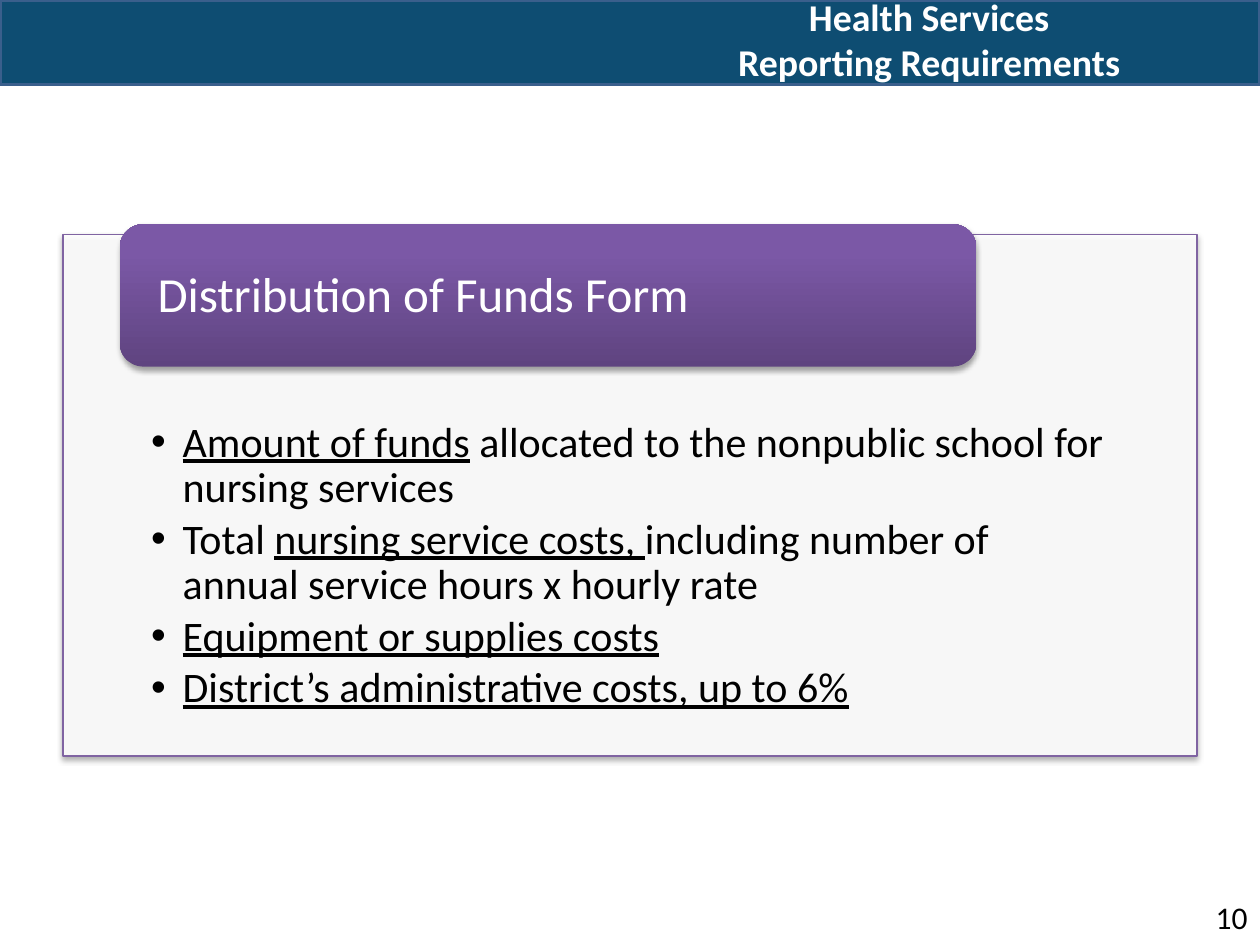
from copy import deepcopy
from dataclasses import dataclass

from lxml import etree
from pptx import Presentation
from pptx.dml.color import RGBColor
from pptx.enum.shapes import MSO_SHAPE
from pptx.enum.text import MSO_ANCHOR, MSO_AUTO_SIZE, PP_ALIGN
from pptx.oxml.ns import qn
from pptx.util import Inches, Pt

RECTANGLE, ROUNDED = MSO_SHAPE.RECTANGLE, MSO_SHAPE.ROUNDED_RECTANGLE
TOP, MIDDLE = MSO_ANCHOR.TOP, MSO_ANCHOR.MIDDLE
LEFT, CENTER, RIGHT = PP_ALIGN.LEFT, PP_ALIGN.CENTER, PP_ALIGN.RIGHT
NO_AUTOFIT = MSO_AUTO_SIZE.NONE

WHITE = RGBColor(0xFF, 0xFF, 0xFF)
BLACK = RGBColor(0x00, 0x00, 0x00)
BAND_FILL = RGBColor(0x0E, 0x4D, 0x72)
BAND_LINE = RGBColor(0x3A, 0x5F, 0x8C)
PURPLE = RGBColor(0x80, 0x64, 0xA2)
HEADING_STOPS = [
    (0.0, RGBColor(0x5F, 0x44, 0x80)),
    (0.8, RGBColor(0x7B, 0x58, 0xA6)),
    (1.0, RGBColor(0x7C, 0x57, 0xA8)),
]
FONT = "Calibri"


@dataclass(frozen=True)
class Area:
    left: float
    top: float
    width: float
    height: float

    def lengths(self) -> list:
        return [Inches(n) for n in (self.left, self.top, self.width, self.height)]


@dataclass(frozen=True)
class Span:
    text: str
    underline: bool = False


BAND = Area(0, 0, 10, 0.67)
TITLE = Area(4.75, 0, 5.25, 0.62)
PANEL = Area(0.5, 1.86, 9, 4.14)
HEADING = Area(0.95, 1.78, 6.8, 1.13)
HEADING_TEXT = Area(1.01, 1.84, 6.69, 1.02)
PAGE_NUMBER = Area(9.33, 7.08, 0.67, 0.4)

REQUIREMENTS = [
    [Span("Amount of funds", True),
     Span(" allocated to the nonpublic school for nursing services")],
    [Span("Total "), Span("nursing service costs, ", True),
     Span("including number of annual service hours x hourly rate")],
    [Span("Equipment or supplies costs", True)],
    [Span("District’s administrative costs, up to 6%", True)],
]


def place(shape, area: Area) -> None:
    shape.left, shape.top, shape.width, shape.height = area.lengths()


def add_block(page, kind, area: Area):
    block = page.shapes.add_shape(kind, *area.lengths())
    block.shadow.inherit = False
    return block


def add_shadow(shape) -> None:
    effects = shape.element.spPr.find(qn("a:effectLst"))
    shadow = etree.SubElement(effects, qn("a:outerShdw"), blurRad="40000",
                              dist="23000", dir="5400000", rotWithShape="0")
    color = etree.SubElement(shadow, qn("a:srgbClr"), val=str(BLACK))
    etree.SubElement(color, qn("a:alpha"), val="35000")


def set_frame(frame, insets: tuple, anchor) -> None:
    frame.word_wrap = True
    frame.auto_size = NO_AUTOFIT
    frame.vertical_anchor = anchor
    (frame.margin_left, frame.margin_top,
     frame.margin_right, frame.margin_bottom) = [Inches(n) for n in insets]


def set_font(para, size: float, color: RGBColor, align, bold: bool = False) -> None:
    para.alignment = align
    font = para.font
    font.name, font.size, font.bold = FONT, Pt(size), bold
    font.color.rgb = color


def add_text(page, area: Area, text: str, size: float, color: RGBColor, align,
             insets: tuple, anchor):
    box = page.shapes.add_textbox(*area.lengths())
    set_frame(box.text_frame, insets, anchor)
    para = box.text_frame.paragraphs[0]
    para.text = text
    set_font(para, size, color, align)
    return para


def add_bullet(para, spans: list) -> None:
    para.level = 1
    properties = para._p.get_or_add_pPr()
    properties.set("marL", str(Inches(0.25)))
    properties.set("indent", str(-Inches(0.25)))
    para.line_spacing, para.space_before, para.space_after = 0.9, Pt(0), Pt(3.6)
    etree.SubElement(properties, qn("a:buFont"), typeface="Arial")
    etree.SubElement(properties, qn("a:buChar"), char="•")
    set_font(para, 24, BLACK, LEFT)
    for span in spans:
        run = para.add_run()
        run.text = span.text
        if span.underline:
            run.font.underline = True


def fill_heading(shape) -> None:
    fill = shape.fill
    fill.gradient()
    fill.gradient_angle = 90
    stop_list = shape.element.spPr.find(qn("a:gradFill")).find(qn("a:gsLst"))
    stop_list.append(deepcopy(stop_list[-1]))
    for stop, (position, color) in zip(fill.gradient_stops, HEADING_STOPS):
        stop.position = position
        stop.color.rgb = color
    shape.line.fill.background()


def main() -> None:
    deck = Presentation()
    deck.slide_width, deck.slide_height = Inches(10), Inches(7.5)
    page = deck.slides.add_slide(deck.slide_layouts[1])
    title, body = page.shapes.title, page.placeholders[1]

    # Top band, behind the title
    band = add_block(page, RECTANGLE, BAND)
    band.fill.solid()
    band.fill.fore_color.rgb = BAND_FILL
    band.line.color.rgb = BAND_LINE
    band.line.width = Pt(2)
    title.element.addprevious(band.element)

    # Title
    place(title, TITLE)
    set_frame(title.text_frame, (0.1, 0.05, 0.1, 0.05), MIDDLE)
    heading = title.text_frame.paragraphs[0]
    heading.text = "Health Services\vReporting Requirements"
    set_font(heading, 21.6, WHITE, CENTER, bold=True)

    # Panel, behind the list
    panel = add_block(page, RECTANGLE, PANEL)
    panel.fill.solid()
    panel.fill.fore_color.rgb = WHITE
    panel_color = panel.element.spPr.find(qn("a:solidFill"))[0]
    etree.SubElement(panel_color, qn("a:alpha"), val="90000")
    panel.line.color.rgb = PURPLE
    panel.line.width = Pt(0.75)
    add_shadow(panel)
    body.element.addprevious(panel.element)

    # List of requirements
    place(body, PANEL)
    frame = body.text_frame
    set_frame(frame, (0.7, 1.48, 0.7, 0.19), TOP)
    for index, spans in enumerate(REQUIREMENTS):
        add_bullet(frame.add_paragraph() if index else frame.paragraphs[0], spans)

    # Panel heading
    tab = add_block(page, ROUNDED, HEADING)
    fill_heading(tab)
    add_shadow(tab)
    label = add_text(page, HEADING_TEXT, "Distribution of Funds Form", 28, WHITE,
                     LEFT, (0.24, 0, 0.24, 0), MIDDLE)
    label.line_spacing = 0.9

    # Page number
    add_text(page, PAGE_NUMBER, "10", 18, BLACK, RIGHT, (0.1, 0.05, 0.1, 0.05), TOP)

    deck.save("out.pptx")


if __name__ == "__main__":
    main()
